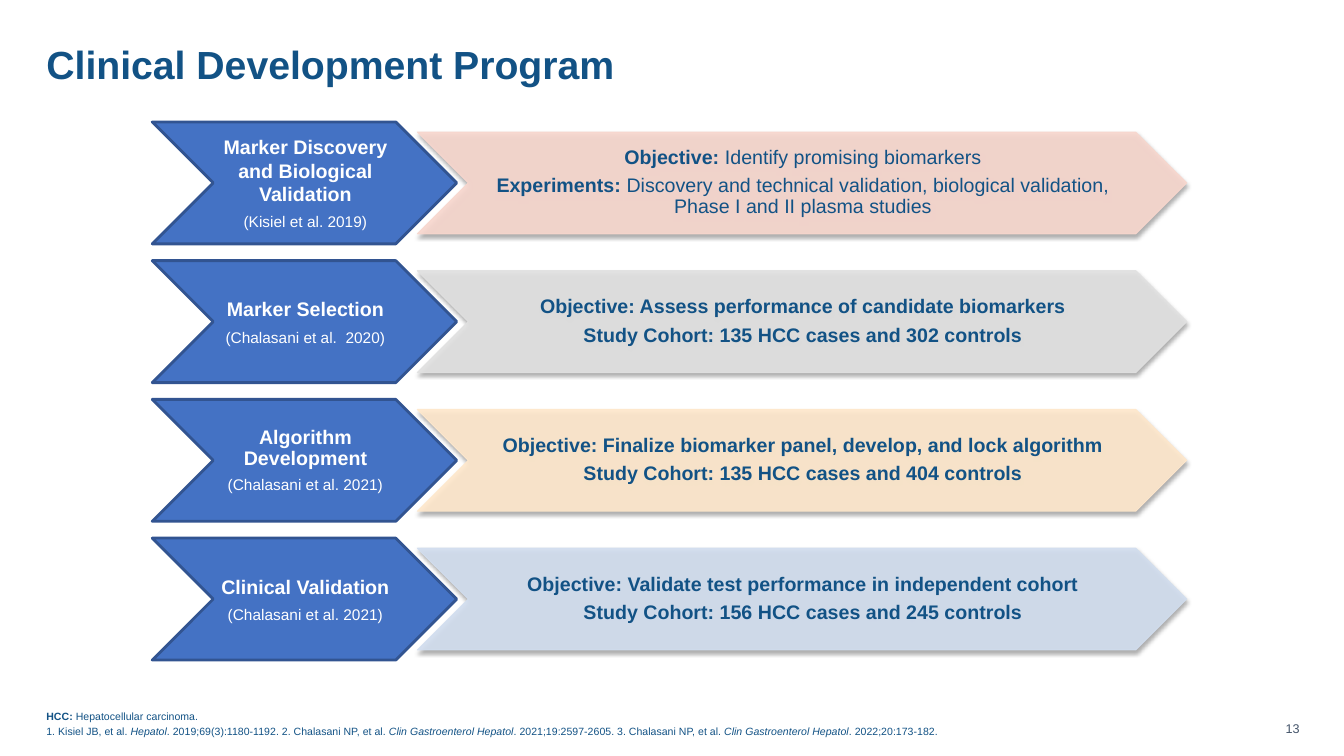
from pptx import Presentation, util as u
from pptx.dml.color import RGBColor
from pptx.enum import shapes, text
from pptx.oxml import parse_xml
from pptx.oxml.ns import nsdecls, qn

NAVY, WHITE, SLATE = "125285", "FFFFFF", "44546A"
STEP_FILL, STEP_LINE = "4472C4", "325491"
CENTER, LEFT, RIGHT = text.PP_ALIGN.CENTER, text.PP_ALIGN.LEFT, text.PP_ALIGN.RIGHT
TOP, MIDDLE, BOTTOM = text.MSO_ANCHOR.TOP, text.MSO_ANCHOR.MIDDLE, text.MSO_ANCHOR.BOTTOM
FIRST_ROW, ROW_PITCH = 1.21, 1.376

# Step name, its line spacing, citation, detail colour, detail paragraphs of (text, style) spans
STEPS = [
    ("Marker Discovery and Biological Validation", 1, "(Kisiel et al. 2019)", "F8D7CE",
     [[("Objective: ", "b"), ("Identify promising biomarkers", "")],
      [("Experiments: ", "b"),
       ("Discovery and technical validation, biological validation, "
        "Phase I and II plasma studies", "")]]),
    ("Marker Selection", 1, "(Chalasani et al.  2020)", "E1E1E1",
     [[("Objective: Assess performance of candidate biomarkers", "b")],
      [("Study Cohort: 135 HCC cases and 302 controls", "b")]]),
    ("Algorithm Development", 0.9, "(Chalasani et al. 2021)", "FFE8CC",
     [[("Objective: Finalize biomarker panel, develop, and lock algorithm", "b")],
      [("Study Cohort: 135 HCC cases and 404 controls", "b")]]),
    ("Clinical Validation", 1, "(Chalasani et al. 2021)", "D2DEEF",
     [[("Objective: Validate test performance in independent cohort", "b")],
      [("Study Cohort: 156 HCC cases and 245 controls", "b")]]),
]
FOOTNOTES = [
    [("HCC: ", "b"), ("Hepatocellular carcinoma.", "")],
    [("1. Kisiel JB, et al. ", ""), ("Hepatol", "i"),
     (". 2019;69(3):1180-1192. 2. Chalasani NP, et al. ", ""),
     ("Clin Gastroenterol Hepatol", "i"),
     (". 2021;19:2597-2605. 3. Chalasani NP, et al. ", ""),
     ("Clin Gastroenterol Hepatol", "i"), (". 2022;20:173-182.", "")],
]


def rgb(color):
    return RGBColor.from_string(color)


def place(box, left, top, width, height):
    box.left, box.top = u.Inches(left), u.Inches(top)
    box.width, box.height = u.Inches(width), u.Inches(height)


def set_frame(box, anchor, left=0, top=0, right=0, bottom=0):
    frame = box.text_frame
    frame.word_wrap = True
    frame.auto_size = text.MSO_AUTO_SIZE.NONE
    frame.vertical_anchor = anchor
    frame.margin_left, frame.margin_top = u.Inches(left), u.Inches(top)
    frame.margin_right, frame.margin_bottom = u.Inches(right), u.Inches(bottom)


def write(box, paragraphs, sizes, color, align, spacing, before=0, after=0):
    """Fill box with paragraphs of (text, style) spans; sizes holds one size per paragraph."""
    frame = box.text_frame
    for index, (spans, size) in enumerate(zip(paragraphs, sizes)):
        para = frame.add_paragraph() if index else frame.paragraphs[0]
        para.alignment, para.line_spacing = align, spacing
        para.space_before, para.space_after = u.Pt(before), u.Pt(after)
        for words, style in spans:
            span = para.add_run()
            span.text = words
            span.font.name, span.font.size = "Arial", u.Pt(size)
            span.font.bold, span.font.italic = "b" in style, "i" in style
            span.font.color.rgb = rgb(color)


def remove_bullets(box):
    for para in box.text_frame.paragraphs:
        properties = para._p.get_or_add_pPr()
        properties.set("marL", "0")
        properties.set("indent", "0")
        properties.append(parse_xml(f"<a:buNone {nsdecls('a')}/>"))


def add_chevron(page, bounds, fill, line, line_width):
    chevron = page.shapes.add_shape(shapes.MSO_SHAPE.CHEVRON,
                                    *(u.Inches(length) for length in bounds))
    chevron.shadow.inherit = False
    chevron.fill.solid()
    chevron.fill.fore_color.rgb = rgb(fill)
    chevron.line.color.rgb = rgb(line)
    chevron.line.width = u.Pt(line_width)
    set_frame(chevron, MIDDLE, left=0.02, top=0.01, bottom=0.01)
    return chevron


def soften(chevron):
    """Make fill and line 90% opaque and drop a short shadow downwards."""
    properties = chevron._element.spPr
    for color in list(properties.iter(qn("a:srgbClr"))):
        color.append(parse_xml(f'<a:alpha {nsdecls("a")} val="90000"/>'))
    properties.find(qn("a:effectLst")).append(parse_xml(
        f'<a:outerShdw {nsdecls("a")} blurRad="{u.Pt(3.1)}" dist="{u.Pt(1.8)}" '
        'dir="5400000" rotWithShape="0"><a:srgbClr val="000000">'
        '<a:alpha val="35000"/></a:srgbClr></a:outerShdw>'))


def add_step(page, top, name, spacing, citation, color, details):
    label = add_chevron(page, (1.51, top, 3.02, 1.21), STEP_FILL, STEP_LINE, 2)
    write(label, [[(name, "b")], [(citation, "")]], (14, 11), WHITE, CENTER, spacing, after=5)
    detail = add_chevron(page, (4.14, top + 0.1, 7.63, 1.01), color, color, 0.75)
    soften(detail)
    write(detail, details, (14, 14), NAVY, CENTER, 0.9, after=5)


def main():
    deck = Presentation()
    deck.slide_width, deck.slide_height = u.Inches(13.33), u.Inches(7.5)
    page = deck.slides.add_slide(deck.slide_layouts[1])

    title, footnote = page.placeholders
    place(title, 0.46, 0.42, 12.35, 0.89)
    set_frame(title, TOP, top=0.05, right=0.1, bottom=0.05)
    write(title, [[("Clinical Development Program", "b")]], (28,), NAVY, LEFT, 0.85)

    place(footnote, 0.46, 6.85, 11.04, 0.47)
    set_frame(footnote, BOTTOM, right=0.1)
    write(footnote, FOOTNOTES, (7.5, 7.5), NAVY, LEFT, 0.85, before=3)
    remove_bullets(footnote)

    for row, step in enumerate(STEPS):
        add_step(page, FIRST_ROW + row * ROW_PITCH, *step)

    number = page.shapes.add_textbox(0, 0, 0, 0)
    place(number, 12.41, 7.17, 0.48, 0.13)
    set_frame(number, BOTTOM)
    write(number, [[("13", "")]], (9,), SLATE, RIGHT, 0.9)
    deck.save("out.pptx")


if __name__ == "__main__":
    main()
